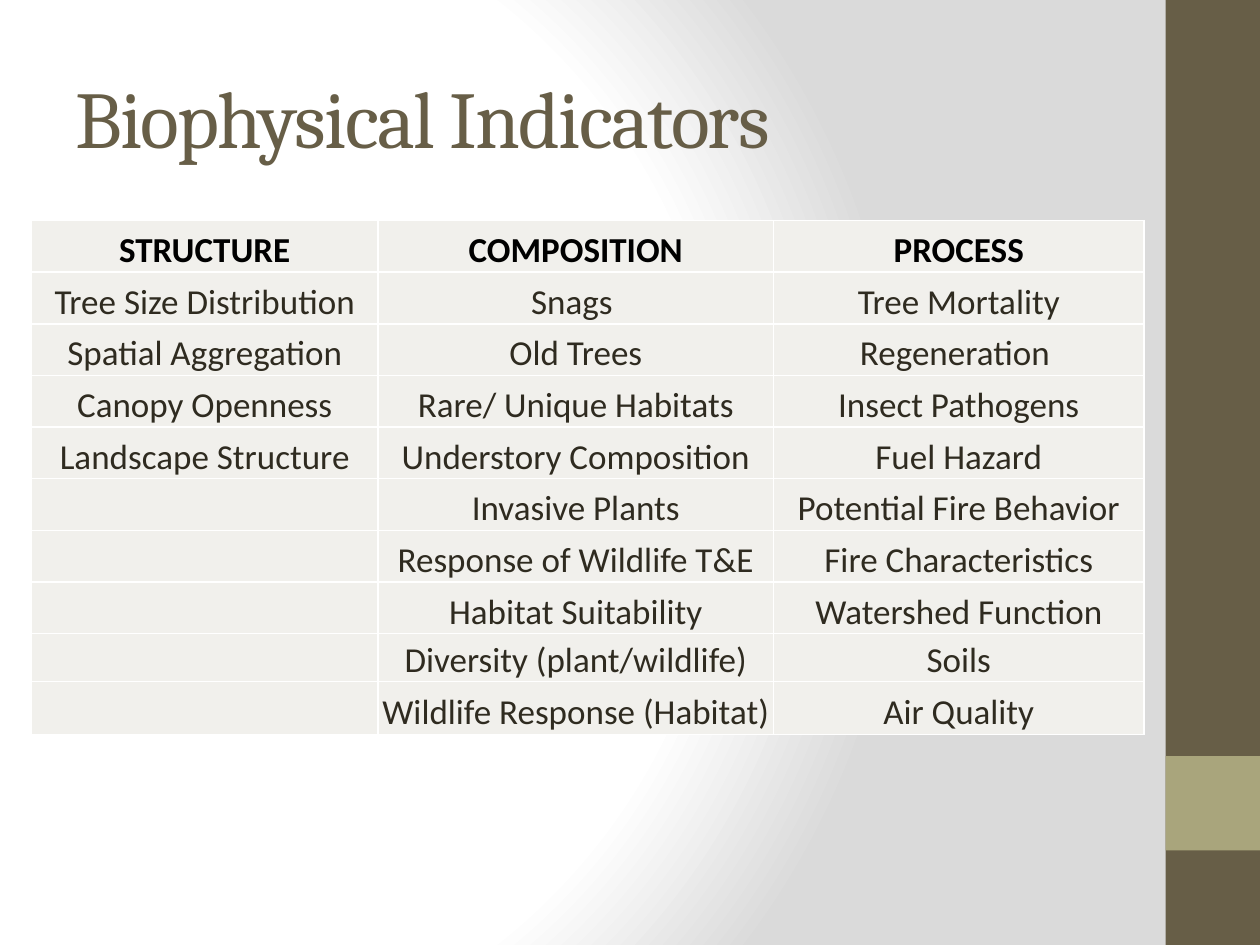
from dataclasses import dataclass

from lxml.etree import SubElement
from pptx import Presentation
from pptx.dml.color import RGBColor
from pptx.enum.shapes import MSO_SHAPE
from pptx.enum.text import MSO_ANCHOR, PP_ALIGN
from pptx.oxml import parse_xml
from pptx.oxml.ns import nsdecls, qn
from pptx.util import Emu, Pt

EMU_PER_PX = 9144


@dataclass(frozen=True)
class Theme:
    """Colours, fonts and type sizes of the slide."""

    white: str = "FFFFFF"
    shade: str = "DADADA"
    brown: str = "675E47"
    olive: str = "A9A57C"
    cell: str = "F1F0EC"
    header: str = "000000"
    body: str = "2F2B20"
    title_font: str = "Cambria"
    body_font: str = "Calibri"
    title_size: int = 46
    body_size: int = 20
    border_width: int = 1


THEME = Theme()

INDICATORS = {
    "STRUCTURE": [
        "Tree Size Distribution",
        "Spatial Aggregation",
        "Canopy Openness",
        "Landscape Structure",
    ],
    "COMPOSITION": [
        "Snags ",
        "Old Trees",
        "Rare/ Unique Habitats",
        "Understory Composition",
        "Invasive Plants",
        "Response of Wildlife T&E",
        "Habitat Suitability",
        "Diversity (plant/wildlife)",
        "Wildlife Response (Habitat)",
    ],
    "PROCESS": [
        "Tree Mortality",
        "Regeneration ",
        "Insect Pathogens",
        "Fuel Hazard",
        "Potential Fire Behavior",
        "Fire Characteristics",
        "Watershed Function",
        "Soils",
        "Air Quality",
    ],
}
COLUMN_WIDTHS = [275, 314, 294]
ROW_HEIGHTS = [41] * 8 + [38, 42]


def px(length):
    """Turn a length in px into EMU."""
    return Emu(length * EMU_PER_PX)


def style_font(font, name, size, color, bold=False):
    """Set the face, size, colour and weight of a font."""
    font.name = name
    font.size = Pt(size)
    font.color.rgb = RGBColor.from_string(color)
    font.bold = bold


def set_background(slide):
    """Fill the slide background with a circular gradient."""
    stops = [(0, THEME.white), (75, THEME.white), (100, THEME.shade)]
    stop_xml = "".join(
        f'<a:gs pos="{position * 1000}"><a:srgbClr val="{color}"/></a:gs>'
        for position, color in stops
    )
    background = parse_xml(
        f'<p:bg {nsdecls("p", "a")}><p:bgPr><a:gradFill rotWithShape="1">'
        f'<a:gsLst>{stop_xml}</a:gsLst><a:path path="circle">'
        '<a:fillToRect l="20000" t="50000" r="100000" b="50000"/></a:path>'
        "</a:gradFill><a:effectLst/></p:bgPr></p:bg>"
    )
    slide.element.cSld.insert(0, background)


def add_block(slide, left, top, width, height, color):
    """Add a plain filled rectangle."""
    shape = slide.shapes.add_shape(
        MSO_SHAPE.RECTANGLE, px(left), px(top), px(width), px(height)
    )
    shape.shadow.inherit = False
    shape.fill.solid()
    shape.fill.fore_color.rgb = RGBColor.from_string(color)
    shape.line.fill.background()


def add_title(slide, text, left, top, width, height):
    """Add the slide title with slightly tightened letters."""
    shape = slide.shapes.add_textbox(px(left), px(top), px(width), px(height))
    frame = shape.text_frame
    frame.word_wrap = True
    frame.vertical_anchor = MSO_ANCHOR.MIDDLE
    frame.text = text
    font = frame.paragraphs[0].runs[0].font
    style_font(font, THEME.title_font, THEME.title_size, THEME.brown)
    font._element.set("spc", "-100")


def add_borders(cell):
    """Draw a thin line on all four sides of a cell."""
    properties = cell._tc.get_or_add_tcPr()
    for index, side in enumerate(("a:lnL", "a:lnR", "a:lnT", "a:lnB")):
        line = SubElement(properties, qn(side), w=str(Pt(THEME.border_width)))
        fill = SubElement(line, qn("a:solidFill"))
        SubElement(fill, qn("a:srgbClr"), val=THEME.white)
        properties.insert(index, line)


def fill_cell(cell, text, is_header):
    """Write and format one table cell."""
    cell.margin_left = cell.margin_right = 0
    cell.margin_top = cell.margin_bottom = 0
    cell.vertical_anchor = MSO_ANCHOR.BOTTOM
    cell.fill.solid()
    cell.fill.fore_color.rgb = RGBColor.from_string(THEME.cell)
    add_borders(cell)
    if text:
        cell.text_frame.text = text
        paragraph = cell.text_frame.paragraphs[0]
        paragraph.alignment = PP_ALIGN.CENTER
        color = THEME.header if is_header else THEME.body
        style_font(
            paragraph.runs[0].font, THEME.body_font, THEME.body_size, color, is_header
        )


def add_indicator_table(slide, left, top):
    """Add the table with one column for each group of indicators."""
    table = slide.shapes.add_table(
        len(ROW_HEIGHTS),
        len(COLUMN_WIDTHS),
        px(left),
        px(top),
        px(sum(COLUMN_WIDTHS)),
        px(sum(ROW_HEIGHTS)),
    ).table
    table.first_row = table.horz_banding = False
    for row, height in zip(table.rows, ROW_HEIGHTS):
        row.height = px(height)
    for column, width in zip(table.columns, COLUMN_WIDTHS):
        column.width = px(width)
    for column_index, (heading, names) in enumerate(INDICATORS.items()):
        texts = [heading, *names]
        texts += [""] * (len(ROW_HEIGHTS) - len(texts))
        for row_index, text in enumerate(texts):
            fill_cell(table.cell(row_index, column_index), text, row_index == 0)


def main():
    """Build the slide and save it."""
    presentation = Presentation()
    presentation.slide_width = px(1000)
    presentation.slide_height = px(750)
    slide = presentation.slides.add_slide(presentation.slide_layouts[6])
    set_background(slide)
    add_block(slide, 925, 0, 75, 750, THEME.brown)
    add_block(slide, 925, 600, 75, 75, THEME.olive)
    add_title(slide, "Biophysical Indicators", 50, 30, 833, 125)
    add_indicator_table(slide, 25, 175)
    presentation.save("out.pptx")


if __name__ == "__main__":
    main()
